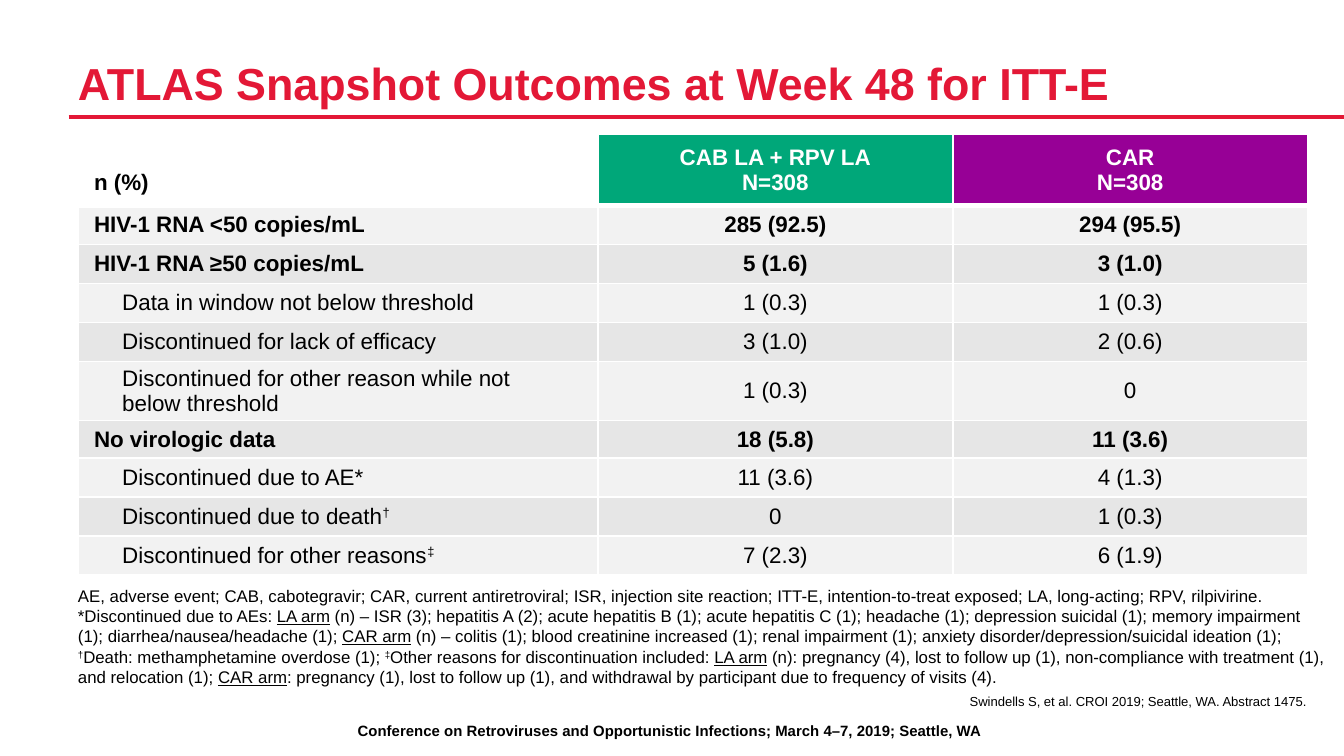
from lxml import etree
from pptx import Presentation
from pptx.dml.color import RGBColor
from pptx.enum.shapes import MSO_CONNECTOR
from pptx.enum.text import MSO_ANCHOR, MSO_AUTO_SIZE, PP_ALIGN
from pptx.oxml.ns import qn
from pptx.util import Inches, Pt

LEFT, CENTER, RIGHT = PP_ALIGN.LEFT, PP_ALIGN.CENTER, PP_ALIGN.RIGHT
TOP, MIDDLE, BOTTOM = MSO_ANCHOR.TOP, MSO_ANCHOR.MIDDLE, MSO_ANCHOR.BOTTOM
STRAIGHT = MSO_CONNECTOR.STRAIGHT
FIT = MSO_AUTO_SIZE.SHAPE_TO_FIT_TEXT

RED, BLACK, WHITE = "E31836", "000000", "FFFFFF"
GREEN, PURPLE = "00A779", "970096"
BANDS = ["F2F2F2", "E6E6E6"]
UNDER, SUPER = "under", "super"
HARD = chr(160)

HEADS = [("n (%)", WHITE, BLACK), ("CAB LA + RPV LA\nN=308", GREEN, WHITE),
         ("CAR\nN=308", PURPLE, WHITE)]
WIDTHS = [3.87, 2.64, 2.64]
ROWS = [
    (0, ["HIV-1 RNA <50 copies/mL"], "285 (92.5)", "294 (95.5)"),
    (0, ["HIV-1 RNA ≥50 copies/mL"], "5 (1.6)", "3 (1.0)"),
    (1, ["Data in window not below threshold"], "1 (0.3)", "1 (0.3)"),
    (1, ["Discontinued for lack of efficacy"], "3 (1.0)", "2 (0.6)"),
    (1, [f"Discontinued for other reason while not below{HARD}threshold"], "1 (0.3)", "0"),
    (0, ["No virologic data"], "18 (5.8)", "11 (3.6)"),
    (1, ["Discontinued due to AE*"], "11 (3.6)", "4 (1.3)"),
    (1, ["Discontinued due to death", ("†", SUPER)], "0", "1 (0.3)"),
    (1, ["Discontinued for other reasons", ("‡", SUPER)], "7 (2.3)", "6 (1.9)"),
]
HEIGHTS = [0.53] + [0.29] * 4 + [0.42, 0.28] + [0.29] * 3
NOTES = [
    ["AE, adverse event; CAB, cabotegravir; CAR, current antiretroviral; "
     "ISR, injection site reaction; ITT-E, intention-to-treat exposed; "
     "LA, long-acting; RPV, rilpivirine."],
    ["*Discontinued due to AEs: ", ("LA arm", UNDER),
     " (n) – ISR (3); hepatitis A (2); acute hepatitis B (1); acute hepatitis C (1); "
     "headache (1); depression suicidal (1); memory impairment (1); "
     "diarrhea/nausea/headache (1); ", ("CAR arm", UNDER),
     " (n) – colitis (1); blood creatinine increased (1); renal impairment (1); "
     "anxiety disorder/depression/suicidal ideation (1); ",
     ("†", SUPER), "Death: methamphetamine overdose (1); ",
     ("‡", SUPER), "Other reasons for discontinuation included: ", ("LA arm", UNDER),
     " (n): pregnancy (4), lost to follow up (1), non-compliance with treatment (1), "
     "and relocation (1); ", ("CAR arm", UNDER),
     ": pregnancy (1), lost to follow up (1), and withdrawal by participant "
     "due to frequency of visits (4)."],
]


def color(code):
    return RGBColor.from_string(code)


def write(para, runs, size, tint=BLACK, bold=False, align=LEFT):
    para.alignment = align
    for item in runs:
        text, style = item if isinstance(item, tuple) else (item, None)
        for i, line in enumerate(text.split("\n")):
            if i:
                para.add_line_break()
            run = para.add_run()
            run.text = line
            font = run.font
            font.name, font.size, font.bold = "Arial", Pt(size), bold
            font.color.rgb = color(tint)
            if style == UNDER:
                font.underline = True
            elif style == SUPER:
                run._r.get_or_add_rPr().set("baseline", "30000")


def add_text(slide, box, paras, size, anchor=TOP, inset=(0, 0), **look):
    frame = slide.shapes.add_textbox(*map(Inches, box)).text_frame
    frame.word_wrap = True
    frame.vertical_anchor = anchor
    frame.margin_left = frame.margin_right = Inches(inset[0])
    frame.margin_top = frame.margin_bottom = Inches(inset[1])
    for i, runs in enumerate(paras):
        para = frame.add_paragraph() if i else frame.paragraphs[0]
        write(para, runs, size, **look)
    return frame


def add_title(slide, box):
    left, top, width, height = box
    frame = add_text(slide, box, [["ATLAS Snapshot Outcomes at Week 48 for ITT-E"]],
                     24, BOTTOM, tint=RED, bold=True)
    frame.paragraphs[0].line_spacing = 0.9
    y = Inches(top + height + 0.05)
    rule = slide.shapes.add_connector(STRAIGHT, Inches(left - 0.07), y, Inches(10), y)
    rule.line.color.rgb = color(RED)
    rule.line.width = Pt(2)
    etree.SubElement(rule._element.spPr, qn("a:effectLst"))


def set_cell(cell, runs, fill, edges, **look):
    props = cell._tc.get_or_add_tcPr()
    for side, width in zip("LRTB", edges):
        line = etree.SubElement(props, qn("a:ln" + side), w=str(Pt(width)))
        solid = etree.SubElement(line, qn("a:solidFill"))
        etree.SubElement(solid, qn("a:srgbClr"), val=WHITE)
    cell.fill.solid()
    cell.fill.fore_color.rgb = color(fill)
    cell.vertical_anchor = MIDDLE
    cell.margin_left = cell.margin_right = Inches(0.12)
    cell.margin_top = cell.margin_bottom = Inches(0.02)
    write(cell.text_frame.paragraphs[0], runs, 12, **look)


def add_grid(slide, box):
    grid = slide.shapes.add_table(len(HEIGHTS), len(WIDTHS), *map(Inches, box)).table
    for col, width in zip(grid.columns, WIDTHS):
        col.width = Inches(width)
    for row, height in zip(grid.rows, HEIGHTS):
        row.height = Inches(height)
    for c, (text, fill, tint) in enumerate(HEADS):
        set_cell(grid.cell(0, c), [text], fill, (1, 1, 1, 3), tint=tint,
                 bold=True, align=CENTER if c else LEFT)
    first = grid.cell(0, 0)
    first.vertical_anchor = BOTTOM
    first.margin_bottom = Inches(0.08)
    for r, (level, label, *values) in enumerate(ROWS, 1):
        edges = (1, 1, 3 if r == 1 else 1, 1)
        for c, runs in enumerate([label] + [[v] for v in values]):
            set_cell(grid.cell(r, c), runs, BANDS[(r - 1) % 2], edges,
                     bold=level == 0, align=CENTER if c else LEFT)
        if level:
            para = grid.cell(r, 0).text_frame.paragraphs[0]
            props = para._p.get_or_add_pPr()
            props.set("marL", str(Inches(0.21)))
            props.set("indent", "0")


def add_foot(slide, box):
    frame = add_text(slide, box, [["Conference on Retroviruses and Opportunistic "
                                   "Infections; March 4–7, 2019; Seattle, WA"]],
                     8, inset=(0.1, 0.05), bold=True, align=CENTER)
    frame.auto_size = FIT


def main():
    deck = Presentation()
    deck.slide_width = Inches(10)
    deck.slide_height = deck.slide_width * 9 // 16
    slide = deck.slides.add_slide(deck.slide_layouts[6])
    add_foot(slide, (0.06, 5.32, 9.85, 0.23))
    add_title(slide, (0.58, 0.13, 8.25, 0.69))
    add_text(slide, (0.58, 5.16, 9.14, 0.15),
             [["Swindells S, et al. CROI 2019; Seattle, WA. Abstract 1475."]],
             7, align=RIGHT)
    add_text(slide, (0.58, 4.22, 9.28, 0.89), NOTES, 9, BOTTOM)
    add_grid(slide, (0.58, 1, sum(WIDTHS), sum(HEIGHTS)))
    deck.save("out.pptx")


if __name__ == "__main__":
    main()
